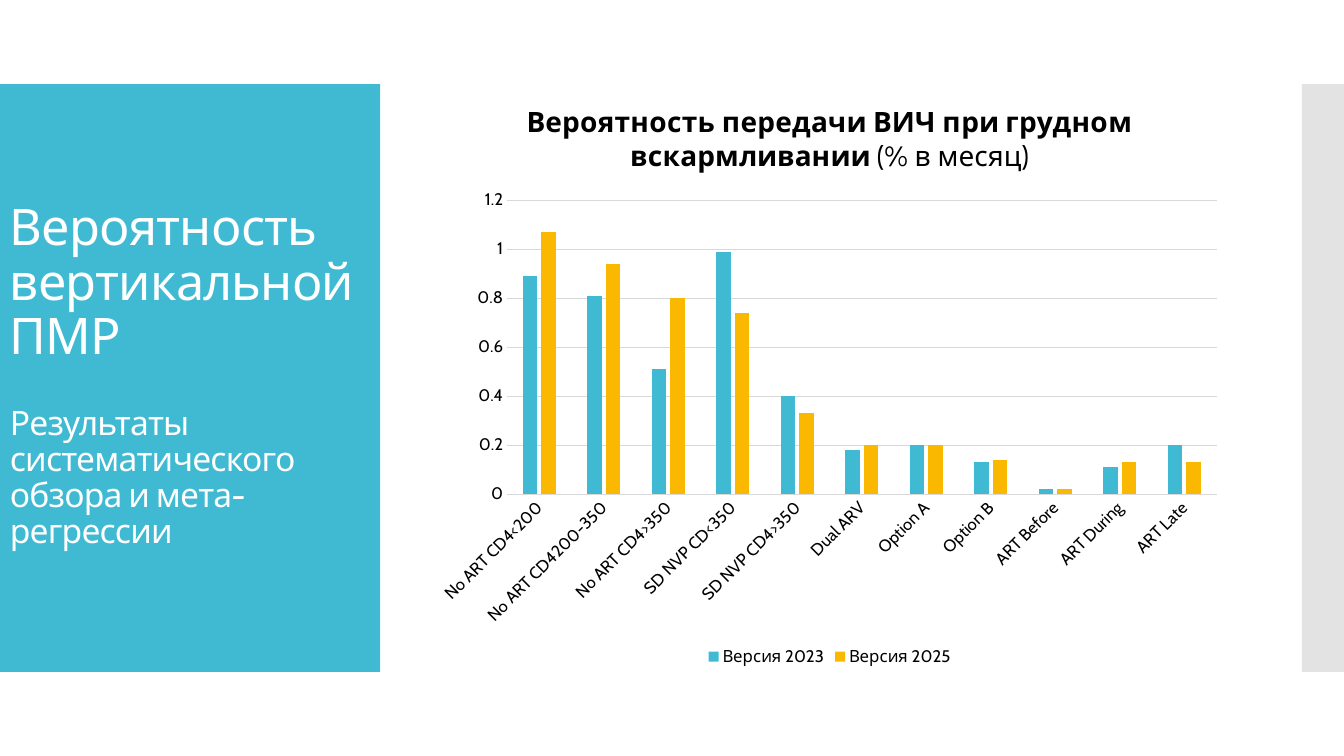
"""Build the slide on the probability of vertical HIV transmission."""
from dataclasses import dataclass

from lxml.etree import SubElement
from pptx import Presentation
from pptx.chart.data import CategoryChartData
from pptx.dml.color import RGBColor
from pptx.enum.chart import XL_CHART_TYPE as ChartType
from pptx.enum.chart import XL_LEGEND_POSITION as LegendPosition
from pptx.enum.chart import XL_TICK_MARK as TickMark
from pptx.enum.shapes import MSO_SHAPE as Preset
from pptx.enum.text import MSO_ANCHOR as Anchor
from pptx.oxml.ns import qn
from pptx.util import Pt

FONT = "Cabin"
TEAL, AMBER, GRID_GREY = "40BAD2", "FAB900", "D9D9D9"
BLACK, WHITE = "000000", "FFFFFF"


@dataclass(frozen=True)
class Band:
    left: float
    width: float
    color: str
    opacity: int = 100


@dataclass(frozen=True)
class Passage:
    text: str
    size: float
    space_before: float = 0


@dataclass(frozen=True)
class Version:
    name: str
    monthly_risk: tuple[float, ...]
    color: str


BANDS = (Band(0, 271.5, TEAL), Band(930, 30, "C8C8C8", 50))
PASSAGES = (
    Passage("Вероятность вертикальной ПМР", 36),
    Passage("Результаты систематического обзора и мета-регрессии", 24, 29),
)
REGIMENS = (
    "No ART CD4<200", "No ART CD4200-350", "No ART CD4>350", "SD NVP CD<350",
    "SD NVP CD4>350", "Dual ARV", "Option A", "Option B", "ART Before",
    "ART During", "ART Late",
)
VERSIONS = (
    Version("Версия 2023",
            (0.89, 0.81, 0.51, 0.99, 0.4, 0.18, 0.2, 0.13, 0.02, 0.11, 0.2), TEAL),
    Version("Версия 2025",
            (1.07, 0.94, 0.8, 0.74, 0.33, 0.2, 0.2, 0.14, 0.02, 0.13, 0.13), AMBER),
)
PLOT_LAYOUT = {
    "layoutTarget": "inner", "xMode": "edge", "yMode": "edge",
    "x": 0.1, "y": 0.2, "w": 0.88, "h": 0.5,
}


def rgb(color: str) -> RGBColor:
    return RGBColor.from_string(color)


def apply(target, formats: dict) -> None:
    for attribute, value in formats.items():
        setattr(target, attribute, value)


def style_font(font, size: float, color: str = BLACK, bold: bool = False) -> None:
    apply(font, {"name": FONT, "size": Pt(size), "bold": bold})
    font.color.rgb = rgb(color)


def style_line(line, color: str) -> None:
    line.color.rgb = rgb(color)
    line.width = Pt(0.75)


def draw_band(slide, band: Band) -> None:
    strip = slide.shapes.add_shape(
        Preset.RECTANGLE, Pt(band.left), Pt(60), Pt(band.width), Pt(420))
    strip.shadow.inherit = False
    strip.line.fill.background()
    strip.fill.solid()
    strip.fill.fore_color.rgb = rgb(band.color)
    if band.opacity < 100:
        tint = strip.fill._xPr.find(f".//{qn('a:srgbClr')}")
        SubElement(tint, qn("a:alpha")).set("val", str(band.opacity * 1000))


def draw_heading(slide) -> None:
    heading = slide.shapes.add_textbox(Pt(0), Pt(88), Pt(265.7), Pt(362)).text_frame
    apply(heading, {"word_wrap": True, "vertical_anchor": Anchor.MIDDLE})
    for index, passage in enumerate(PASSAGES):
        paragraph = heading.add_paragraph() if index else heading.paragraphs[0]
        apply(paragraph, {"line_spacing": 0.9, "space_before": Pt(passage.space_before)})
        run = paragraph.add_run()
        run.text = passage.text
        style_font(run.font, passage.size, WHITE)
        run.font._element.set("spc", "-60")


def place_plot(chart) -> None:
    plot_area = chart._chartSpace.find(f".//{qn('c:plotArea')}")
    for automatic in plot_area.findall(qn("c:layout")):
        plot_area.remove(automatic)
    layout = SubElement(plot_area, qn("c:layout"))
    plot_area.insert(0, layout)
    manual = SubElement(layout, qn("c:manualLayout"))
    for tag, value in PLOT_LAYOUT.items():
        SubElement(manual, qn(f"c:{tag}")).set("val", str(value))


def draw_risk_chart(slide) -> None:
    risks = CategoryChartData()
    risks.categories = REGIMENS
    for version in VERSIONS:
        risks.add_series(version.name, version.monthly_risk)
    chart = slide.shapes.add_chart(
        ChartType.COLUMN_CLUSTERED, Pt(304.6), Pt(59), Pt(576), Pt(420), risks).chart
    style_font(chart.font, 10)

    caption = chart.chart_title.text_frame.paragraphs[0]
    for words, bold in (("Вероятность передачи ВИЧ при грудном вскармливании", True),
                        (" (% в месяц)", False)):
        run = caption.add_run()
        run.text = words
        style_font(run.font, 20, bold=bold)
    chart.chart_title.include_in_layout = False

    columns = chart.plots[0]
    apply(columns, {"gap_width": 219, "overlap": -27, "vary_by_categories": False})
    for series, version in zip(columns.series, VERSIONS):
        series.format.fill.solid()
        series.format.fill.fore_color.rgb = rgb(version.color)

    regimen_axis, risk_axis = chart.category_axis, chart.value_axis
    for axis in (regimen_axis, risk_axis):
        apply(axis, {"major_tick_mark": TickMark.NONE, "minor_tick_mark": TickMark.NONE})
        style_font(axis.tick_labels.font, 12)
    style_line(regimen_axis.format.line, GRID_GREY)
    regimen_axis._element.find(f".//{qn('a:bodyPr')}").set("rot", "-2700000")
    apply(risk_axis, {"minimum_scale": 0, "maximum_scale": 1.2, "major_unit": 0.2})
    risk_axis.format.line.fill.background()
    style_line(risk_axis.major_gridlines.format.line, GRID_GREY)

    chart.has_legend = True
    apply(chart.legend, {"position": LegendPosition.BOTTOM, "include_in_layout": False})
    style_font(chart.legend.font, 12)
    place_plot(chart)


def main() -> None:
    deck = Presentation()
    apply(deck, {"slide_width": Pt(960), "slide_height": Pt(540)})
    slide = deck.slides.add_slide(deck.slide_layouts[6])
    for band in BANDS:
        draw_band(slide, band)
    draw_heading(slide)
    draw_risk_chart(slide)
    deck.save("out.pptx")


if __name__ == "__main__":
    main()
